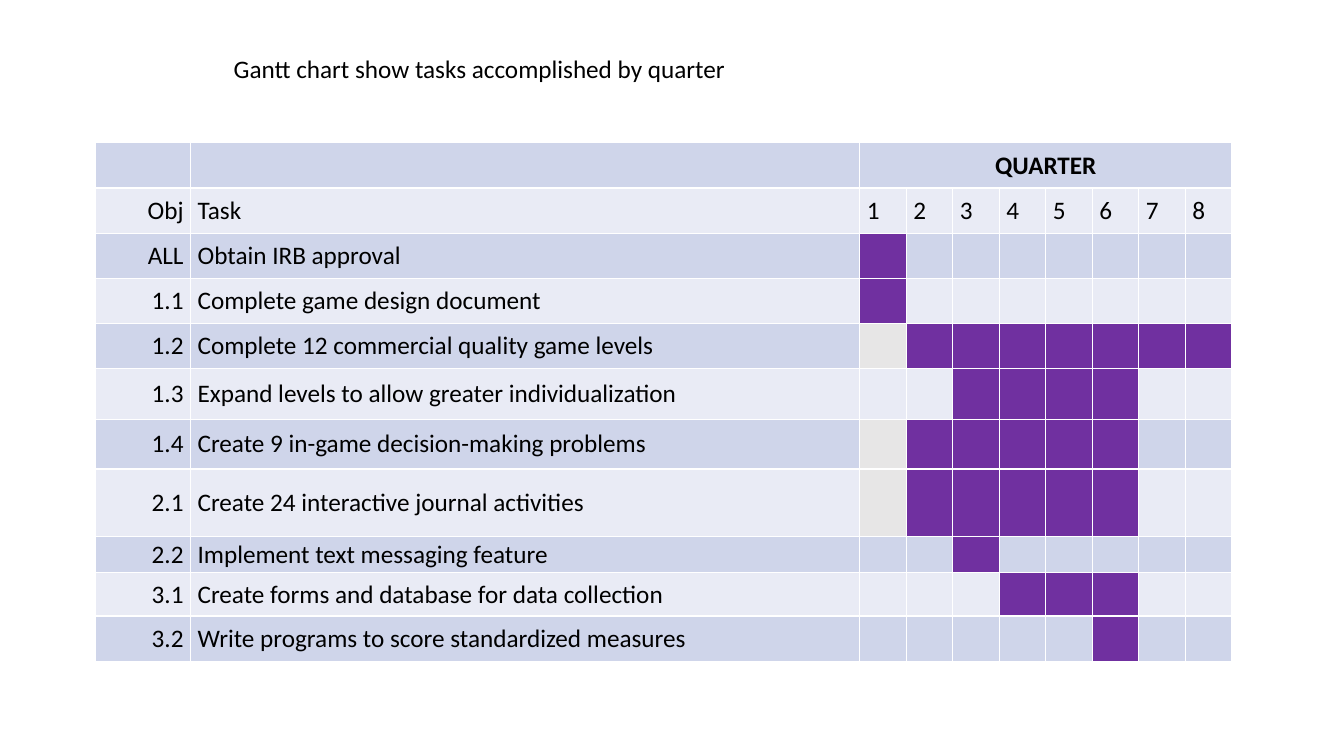
import pptx
import pptx.dml.color
import pptx.enum.text
import pptx.oxml
import pptx.oxml.ns
import pptx.util

INK, DONE, IDLE = "000000", "7030A0", "E7E6E6"
BANDS = ("CFD5EA", "E9EBF5")
QUARTERS = 8
COLUMN_SHARES = [7.05, 49.8] + [3.46] * QUARTERS
TASKS = [
    ("ALL", "Obtain IRB approval", 1, 1, 5.97),
    ("1.1", "Complete game design document", 1, 1, 5.97),
    ("1.2", "Complete 12 commercial quality game levels", 2, 8, 5.97),
    ("1.3", "Expand levels to allow greater individualization", 3, 6, 6.73),
    ("1.4", "Create 9 in-game decision-making problems", 2, 6, 6.57),
    ("2.1", "Create 24 interactive journal activities", 2, 6, 8.93),
    ("2.2", "Implement text messaging feature", 3, 3, 4.8),
    ("3.1", "Create forms and database for data collection", 4, 6, 5.73),
    ("3.2", "Write programs to score standardized measures", 6, 6, 5.97),
]
ROW_SHARES = [5.97, 5.97] + [task[4] for task in TASKS]
ALIGN = pptx.enum.text.PP_ALIGN


def colour(value):
    return pptx.dml.color.RGBColor.from_string(value)


class GanttSlide:
    font = "Calibri"
    size = pptx.util.Pt(18)

    def __init__(self, deck):
        self.deck = deck
        self.slide = deck.slides.add_slide(deck.slide_layouts[6])

    def across(self, share):
        return round(self.deck.slide_width * share / 100)

    def down(self, share):
        return round(self.deck.slide_height * share / 100)

    def label(self, frame, text, align=ALIGN.LEFT, bold=False):
        frame.text = text
        paragraph = frame.paragraphs[0]
        paragraph.alignment = align
        for run in paragraph.runs:
            run.font.name = self.font
            run.font.size = self.size
            run.font.bold = bold
            run.font.color.rgb = colour(INK)

    def caption(self, text, left, top, width, height):
        box = self.slide.shapes.add_textbox(
            self.across(left), self.down(top), self.across(width), self.down(height))
        box.text_frame.word_wrap = False
        box.text_frame.auto_size = pptx.enum.text.MSO_AUTO_SIZE.SHAPE_TO_FIT_TEXT
        self.label(box.text_frame, text)

    def grid(self, left, top, columns, rows):
        table = self.slide.shapes.add_table(
            len(rows), len(columns), self.across(left), self.down(top),
            self.across(sum(columns)), self.down(sum(rows))).table
        table.first_row = False
        for column, share in zip(table.columns, columns):
            column.width = self.across(share)
        for index, (row, share) in enumerate(zip(table.rows, rows)):
            row.height = self.down(share)
            for cell in row.cells:
                cell.margin_left = cell.margin_right = pptx.util.Inches(0.07)
                cell.margin_top = cell.margin_bottom = 0
                cell.vertical_anchor = pptx.enum.text.MSO_ANCHOR.MIDDLE
                self.border(cell)
                self.paint(cell, BANDS[index % 2])
        return table

    def border(self, cell):
        properties = cell._tc.get_or_add_tcPr()
        for side in ("lnL", "lnR", "lnT", "lnB"):
            properties.append(pptx.oxml.parse_xml(
                f'<a:{side} {pptx.oxml.ns.nsdecls("a")} w="12700"><a:solidFill>'
                f'<a:srgbClr val="FFFFFF"/></a:solidFill></a:{side}>'))

    def paint(self, cell, value):
        cell.fill.solid()
        cell.fill.fore_color.rgb = colour(value)


def main():
    deck = pptx.Presentation()
    deck.slide_width = pptx.util.Inches(13.33)
    deck.slide_height = pptx.util.Inches(7.5)
    gantt = GanttSlide(deck)
    schedule = gantt.grid(7.13, 18.9, COLUMN_SHARES, ROW_SHARES)

    heading = schedule.cell(0, 2)
    heading.merge(schedule.cell(0, QUARTERS + 1))
    gantt.label(heading.text_frame, "QUARTER", ALIGN.CENTER, True)
    for quarter in range(1, QUARTERS + 1):
        gantt.label(schedule.cell(1, quarter + 1).text_frame, str(quarter))

    labels = [("Obj", "Task")] + [task[:2] for task in TASKS]
    for row, (objective, task) in enumerate(labels, 1):
        gantt.label(schedule.cell(row, 0).text_frame, objective, ALIGN.RIGHT)
        gantt.label(schedule.cell(row, 1).text_frame, task)

    for row, (_, _, start, end, _) in enumerate(TASKS, 2):
        for quarter in range(start, end + 1):
            gantt.paint(schedule.cell(row, quarter + 1), DONE)
        if start == 2:
            gantt.paint(schedule.cell(row, 2), IDLE)

    gantt.caption("Gantt chart show tasks accomplished by quarter", 16.65, 6.4, 38.56, 5.33)
    deck.save("out.pptx")


if __name__ == "__main__":
    main()
